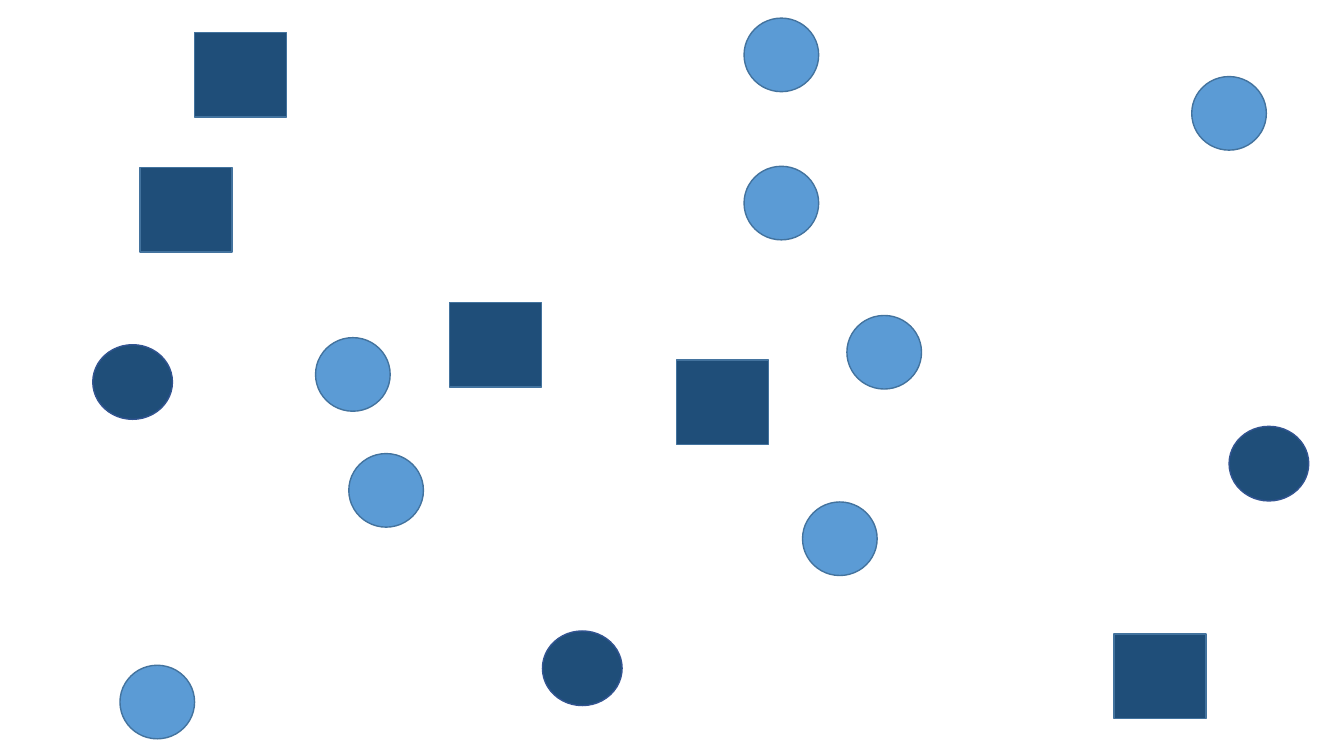
from dataclasses import dataclass

import pptx
import pptx.dml.color
import pptx.enum.shapes
import pptx.slide
import pptx.util

MSO_SHAPE = pptx.enum.shapes.MSO_SHAPE


@dataclass(frozen=True)
class Style:
    kind: MSO_SHAPE
    width: float
    height: float
    fill: str
    line: str


@dataclass(frozen=True)
class Group:
    style: Style
    positions: tuple[tuple[float, float], ...]


LIGHT_CIRCLE = Style(MSO_SHAPE.OVAL, 0.74, 0.73, "5B9BD5", "43739E")
DARK_CIRCLE = Style(MSO_SHAPE.OVAL, 0.79, 0.74, "1F4E79", "325491")
DARK_BOX = Style(MSO_SHAPE.RECTANGLE, 0.91, 0.84, "1F4E79", "43739E")

GROUPS = (
    Group(LIGHT_CIRCLE, ((1.19, 6.6), (3.46, 4.5), (3.13, 3.35), (7.96, 4.98),
                         (7.38, 1.65), (8.4, 3.13), (11.82, 0.76))),
    Group(DARK_CIRCLE, ((0.92, 3.42), (5.38, 6.26), (12.19, 4.23))),
    Group(DARK_BOX, ((1.39, 1.66), (4.46, 3), (11.05, 6.29),
                     (1.93, 0.32), (6.71, 3.57))),
    Group(LIGHT_CIRCLE, ((7.38, 0.18),)),
)


def color(value: str) -> pptx.dml.color.RGBColor:
    return pptx.dml.color.RGBColor.from_string(value)


def draw_shape(s: pptx.slide.Slide, style: Style, left: float, top: float) -> None:
    box = (pptx.util.Inches(v) for v in (left, top, style.width, style.height))
    sp = s.shapes.add_shape(style.kind, *box)
    sp.shadow.inherit = False
    sp.fill.solid()
    sp.fill.fore_color.rgb = color(style.fill)
    sp.line.color.rgb = color(style.line)
    sp.line.width = pptx.util.Pt(1)


def main() -> None:
    prs = pptx.Presentation()
    prs.slide_width = pptx.util.Inches(13.33)
    prs.slide_height = pptx.util.Inches(7.5)
    s = prs.slides.add_slide(prs.slide_layouts[6])
    for group in GROUPS:
        for left, top in group.positions:
            draw_shape(s, group.style, left, top)
    prs.save("out.pptx")


if __name__ == "__main__":
    main()
